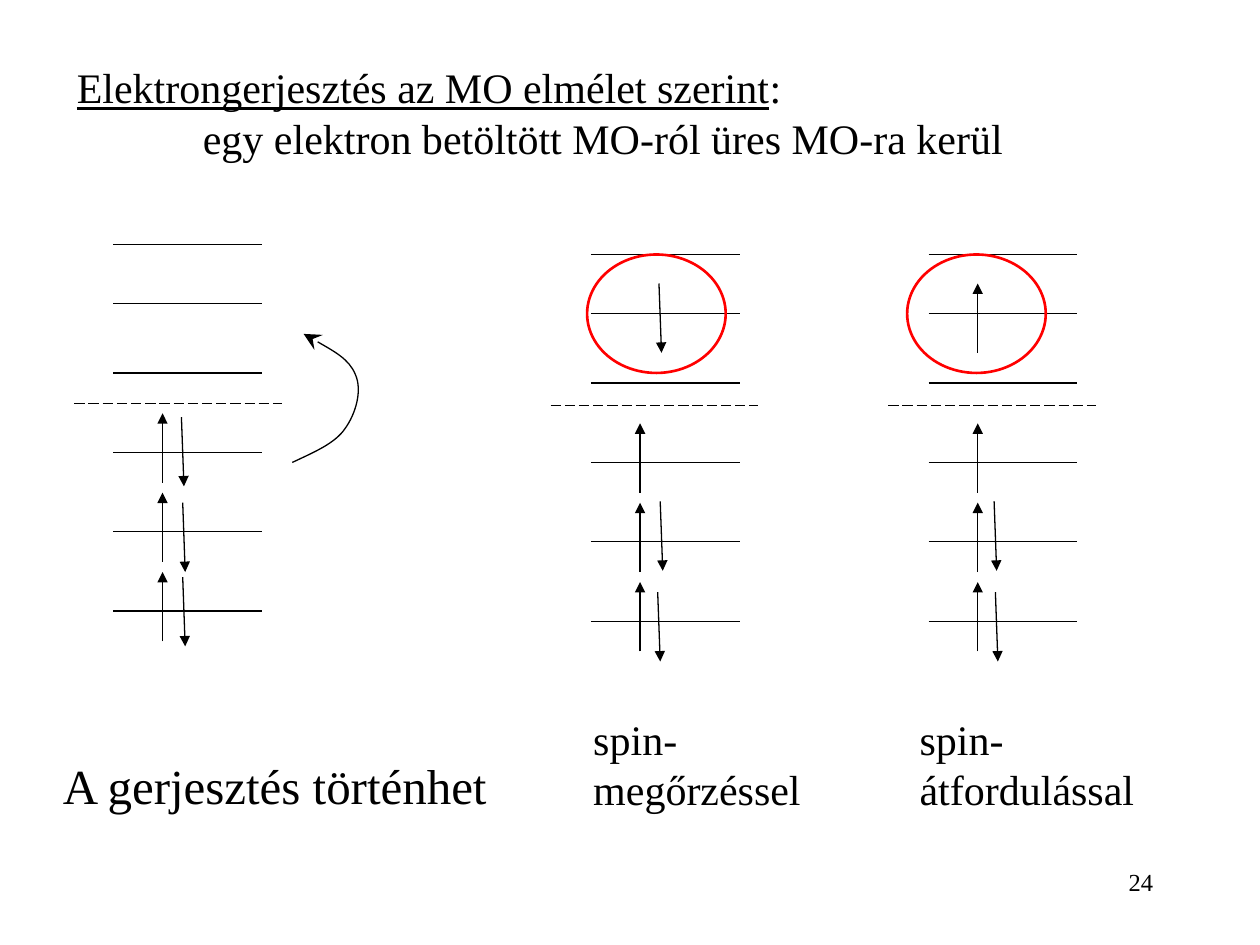
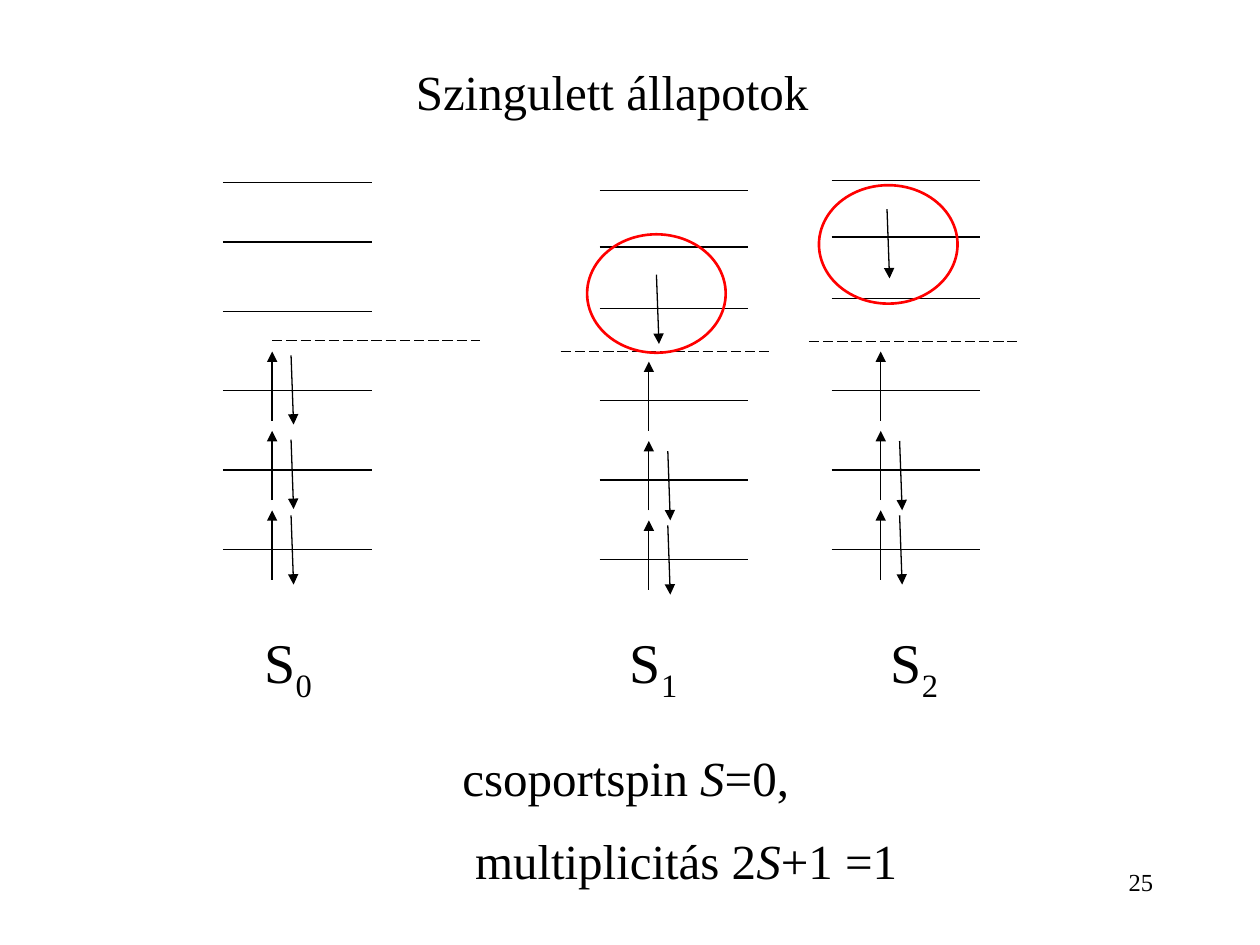
from lxml.etree import SubElement
from pptx import Presentation
from pptx.dml.color import RGBColor
from pptx.enum.dml import MSO_LINE_DASH_STYLE as DASH
from pptx.enum.shapes import MSO_CONNECTOR as CONNECTOR, MSO_SHAPE as SHAPE
from pptx.enum.text import MSO_ANCHOR as ANCHOR, MSO_AUTO_SIZE as AUTO_SIZE, PP_ALIGN as ALIGN
from pptx.oxml.ns import qn
from pptx.util import Inches, Pt

COLORS = {"ink": "000000", "highlight": "FF0000"}
FONT = "Times New Roman"
LEVEL_WIDTH = 1.18
GAP_WIDTH = 1.65
SPIN_LENGTH = 0.55
SPIN_TILT = 0.02
UP_SPIN_X = 0.39
UP_SPIN_DROP = 0.24
RING_WIDTH, RING_HEIGHT = 1.1, 0.94
RISES = [0, 0.63, 1.26, 1.89, 2.44, 2.91]
EXCITED_RISES = [0, 0.63, 1.26, 1.99, 2.48, 2.93]


def write_text(shape, box, size, paragraphs, align=ALIGN.LEFT, indent=0, gap=0):
    shape.left, shape.top, shape.width, shape.height = [Inches(length) for length in box]
    frame = shape.text_frame
    frame.word_wrap = True
    frame.auto_size = AUTO_SIZE.NONE
    frame.vertical_anchor = ANCHOR.TOP
    for index, pieces in enumerate(paragraphs):
        paragraph = frame.add_paragraph() if index else frame.paragraphs[0]
        paragraph.alignment = align
        paragraph.space_before = Pt(gap if index else 0)
        properties = paragraph._p.get_or_add_pPr()
        properties.set("marL", str(Inches(indent if index else 0)))
        properties.set("indent", "0")
        SubElement(properties, qn("a:buNone"))
        for text, style in pieces:
            run = paragraph.add_run()
            run.text = text
            run.font.name = FONT
            run.font.size = Pt(size)
            run.font.color.rgb = RGBColor.from_string(COLORS["ink"])
            if style == "underline":
                run.font.underline = True
            elif style == "italic":
                run.font.italic = True
            elif style == "subscript":
                run.font._element.set("baseline", "-25000")


def add_line(slide, x1, y1, x2, y2, arrow=False, dashed=False):
    line = slide.shapes.add_connector(
        CONNECTOR.STRAIGHT, Inches(x1), Inches(y1), Inches(x2), Inches(y2))
    line.line.color.rgb = RGBColor.from_string(COLORS["ink"])
    line.line.width = Pt(0.75)
    if dashed:
        line.line.dash_style = DASH.LONG_DASH
    if arrow:
        SubElement(line.line._get_or_add_ln(), qn("a:tailEnd"), type="triangle")
    SubElement(line._element.spPr, qn("a:effectLst"))


presentation = Presentation()
presentation.slide_width = Inches(10)
presentation.slide_height = Inches(7.5)
excitation = presentation.slides.add_slide(presentation.slide_layouts[5])
singlets = presentation.slides.add_slide(presentation.slide_layouts[1])

for number, slide in enumerate([excitation, singlets], 24):
    box = slide.shapes.add_textbox(0, 0, 0, 0)
    write_text(box, (7.17, 6.83, 2.08, 0.5), 14, [[(str(number), "")]], ALIGN.RIGHT)

diagrams = [
    dict(slide=excitation, left=0.9, base=4.85, rises=RISES, gap=(0.59, 3.2),
         down=[(1.45, 4.58), (1.45, 3.99), (1.44, 3.31)]),
    dict(slide=excitation, left=4.69, base=4.93, rises=RISES, gap=(4.37, 3.22),
         down=[(5.22, 4.7), (5.24, 3.98), (5.23, 2.25)], ring=(4.66, 2.02)),
    dict(slide=excitation, left=7.37, base=4.93, rises=RISES, gap=(7.05, 3.22),
         down=[(7.9, 4.7), (7.89, 3.98)], up=[(7.76, 2.8)], ring=(7.2, 2.02)),
    dict(slide=singlets, left=1.77, base=4.36, rises=RISES, gap=(2.16, 2.7),
         down=[(2.31, 4.09), (2.31, 3.49), (2.31, 2.82)]),
    dict(slide=singlets, left=4.76, base=4.44, rises=EXCITED_RISES, gap=(4.45, 2.79),
         down=[(5.3, 4.17), (5.3, 3.58), (5.21, 2.18)], ring=(4.66, 1.86)),
    dict(slide=singlets, left=6.6, base=4.36, rises=EXCITED_RISES, gap=(6.42, 2.71),
         down=[(7.14, 4.09), (7.14, 3.5), (7.04, 1.66)], ring=(6.5, 1.47)),
]

for diagram in diagrams:
    slide, left, base = diagram["slide"], diagram["left"], diagram["base"]
    for rise in diagram["rises"]:
        add_line(slide, left, base - rise, left + LEVEL_WIDTH, base - rise)
    paired_up = [(left + UP_SPIN_X, base - rise + UP_SPIN_DROP) for rise in RISES[:3]]
    for x, y in paired_up + diagram.get("up", []):
        add_line(slide, x, y, x, y - SPIN_LENGTH, arrow=True)
    for x, y in diagram["down"]:
        add_line(slide, x, y, x + SPIN_TILT, y + SPIN_LENGTH, arrow=True)
    x, y = diagram["gap"]
    add_line(slide, x, y, x + GAP_WIDTH, y, dashed=True)
    if "ring" in diagram:
        x, y = diagram["ring"]
        ring = slide.shapes.add_shape(
            SHAPE.OVAL, Inches(x), Inches(y), Inches(RING_WIDTH), Inches(RING_HEIGHT))
        ring.shadow.inherit = False
        ring.fill.background()
        ring.line.color.rgb = RGBColor.from_string(COLORS["highlight"])
        ring.line.width = Pt(1.5)

curve_points = [(2.49, 3.59), (2.66, 3.52), (2.74, 3.4),
                (2.82, 3.29), (2.88, 3.1), (2.82, 2.97),
                (2.77, 2.85), (2.59, 2.75), (2.41, 2.65)]
builder = excitation.shapes.build_freeform(Inches(2.32), Inches(3.67))
builder.add_line_segments([(Inches(x), Inches(y)) for x, y in curve_points], close=False)
jump = builder.convert_to_shape()
jump.shadow.inherit = False
jump.fill.background()
jump.line.color.rgb = RGBColor.from_string(COLORS["ink"])
jump.line.width = Pt(0.75)
SubElement(jump.line._get_or_add_ln(), qn("a:tailEnd"), type="stealth", w="lg", len="lg")
segments = list(jump._element.iter(qn("a:lnTo")))
outline = segments[0].getparent()
for start in range(0, len(segments), 3):
    bezier = SubElement(outline, qn("a:cubicBezTo"))
    for segment in segments[start:start + 3]:
        bezier.append(segment[0])
        outline.remove(segment)

write_text(excitation.shapes.title, (0.51, 0.44, 8.19, 0.91), 24, [
    [("Elektrongerjesztés az MO elmélet szerint", "underline"), (":", "")],
    [("egy elektron betöltött MO-ról üres MO-ra kerül", "")],
], indent=1)
write_text(singlets.shapes.title, (3.2, 0.44, 3.79, 0.57), 28, [[("Szingulett állapotok", "")]])
write_text(singlets.placeholders[1], (3.57, 5.88, 4.04, 1.28), 28, [
    [("csoportspin", ""), (" S", "italic"), ("=0,", "")],
    [("multiplicitás 2", ""), ("S", "italic"), ("+1 =1", "")],
], indent=0.1, gap=14)

captions = [
    ("A gerjesztés történhet", 28, (0.4, 5.95, 3.68, 0.57)),
    ("spin-megőrzéssel", 24, (4.61, 5.61, 1.89, 0.91)),
    ("spin-átfordulással", 24, (7.2, 5.61, 2.05, 0.91)),
]
for text, size, box in captions:
    write_text(excitation.shapes.add_textbox(0, 0, 0, 0), box, size, [[(text, "")]])

for index, x in enumerate([2, 4.9, 6.97]):
    write_text(singlets.shapes.add_textbox(0, 0, 0, 0), (x, 4.93, 0.71, 0.63), 32,
               [[("S", ""), (str(index), "subscript")]])

presentation.save("out.pptx")
